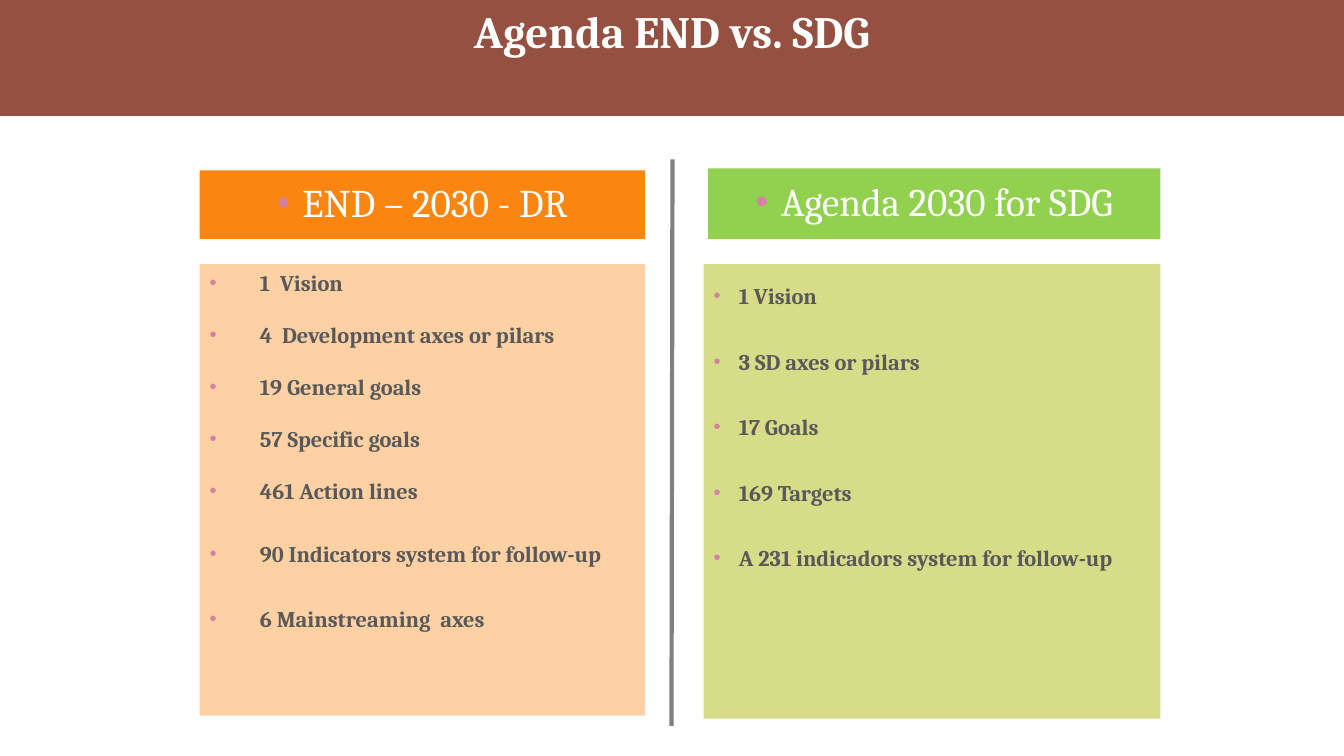
from lxml import etree
from pptx import Presentation
from pptx.dml.color import RGBColor
from pptx.enum.shapes import MSO_CONNECTOR, MSO_SHAPE
from pptx.enum.text import MSO_ANCHOR, PP_ALIGN
from pptx.oxml.ns import qn
from pptx.util import Pt

RECT = MSO_SHAPE.RECTANGLE
LINE = MSO_CONNECTOR.STRAIGHT
TOP, MIDDLE = MSO_ANCHOR.TOP, MSO_ANCHOR.MIDDLE
LEFT, CENTER = PP_ALIGN.LEFT, PP_ALIGN.CENTER
PX = 9144  # one hundredth of an inch
FONT = "Cambria"
HUES = {
    "band": "945141", "white": "FFFFFF", "text": "595959", "dot": "D680A5",
    "rule": "808080", "orange": "FA8511", "peach": "FDD1A4",
    "green": "92D050", "lime": "D7DC88",
}
TITLE = {"size": Pt(32), "bold": True}
HEAD = {"size": Pt(28), "bold": False}
ITEM = {"size": Pt(16), "bold": True}

# Each item: text and the space before it in points
END = [
    ("1  Vision", 0),
    ("4  Development axes or pilars", 18),
    ("19 General goals", 18),
    ("57 Specific goals", 18),
    ("461 Action lines", 18),
    ("90 Indicators system for follow-up", 26),
    ("6 Mainstreaming  axes", 27),
]
SDG = [
    ("1 Vision", 0),
    ("3 SD axes or pilars", 12),
    ("17 Goals", 12),
    ("169 Targets", 12),
    ("A 231 indicadors system for follow-up", 12),
]


def color(name):
    return RGBColor.from_string(HUES[name])


def apply(target, values):
    for key, value in values.items():
        setattr(target, key, value)


def place(shape, box):
    keys = ("left", "top", "width", "height")
    apply(shape, dict(zip(keys, (n * PX for n in box))))


def paint(shape, hue):
    shape.fill.solid()
    shape.fill.fore_color.rgb = color(hue)


def style(para, font, hue):
    apply(para.font, {"name": FONT, **font})
    para.font.color.rgb = color(hue)


def bullet(para, indent):
    """Hang the paragraph by indent px behind a round bullet."""
    props = para._p.get_or_add_pPr()
    props.set("marL", str(indent * PX))
    props.set("indent", str(-indent * PX))
    hue = etree.SubElement(props, qn("a:buClr"))
    etree.SubElement(hue, qn("a:srgbClr"), val=HUES["dot"])
    etree.SubElement(props, qn("a:buSzPct"), val="90000")
    etree.SubElement(props, qn("a:buFont"), typeface="Arial")
    etree.SubElement(props, qn("a:buChar"), char="•")


def panel(slide, box, hue, anchor):
    shape = slide.shapes.add_shape(RECT, *(n * PX for n in box))
    shape.shadow.inherit = False
    paint(shape, hue)
    shape.line.fill.background()
    apply(shape.text_frame, {"word_wrap": True, "vertical_anchor": anchor})
    return shape.text_frame


def heading(slide, box, hue, text):
    para = panel(slide, box, hue, MIDDLE).paragraphs[0]
    para.text = text
    bullet(para, 25)
    apply(para, {"alignment": CENTER, "line_spacing": 0.9})
    style(para, HEAD, "white")


def listing(slide, box, hue, items, indent, form):
    frame = panel(slide, box, hue, TOP)
    for i, (text, gap) in enumerate(items):
        para = frame.add_paragraph() if i else frame.paragraphs[0]
        para.text = text
        bullet(para, indent)
        apply(para, {"alignment": LEFT, "space_before": Pt(gap), **form})
        style(para, ITEM, "text")


def banner(slide, text):
    title = slide.shapes.title
    place(title, (0, 0, 1333, 115))
    paint(title, "band")
    apply(title.text_frame, {"word_wrap": True, "vertical_anchor": TOP,
                             "margin_top": 10 * PX})
    para = title.text_frame.paragraphs[0]
    para.text = text
    apply(para, {"alignment": CENTER, "line_spacing": 0.9})
    style(para, TITLE, "white")


def divider(slide, ends):
    rule = slide.shapes.add_connector(LINE, *(n * PX for n in ends))
    rule.line.color.rgb = color("rule")
    rule.line.width = Pt(3)
    etree.SubElement(rule._element.spPr, qn("a:effectLst"))


def main():
    deck = Presentation()
    apply(deck, {"slide_width": 1333 * PX, "slide_height": 750 * PX})
    slide = deck.slides.add_slide(deck.slide_layouts[5])
    banner(slide, "Agenda END vs. SDG")
    heading(slide, (198, 169, 442, 68), "orange", "END – 2030 - DR")
    listing(slide, (198, 262, 442, 448), "peach", END, 50, {})
    heading(slide, (702, 167, 449, 70), "green", "Agenda 2030 for SDG")
    listing(slide, (698, 262, 453, 451), "lime", SDG, 25,
            {"line_spacing": 1.5, "space_after": Pt(6)})
    divider(slide, (667, 158, 666, 720))
    deck.save("out.pptx")


if __name__ == "__main__":
    main()
